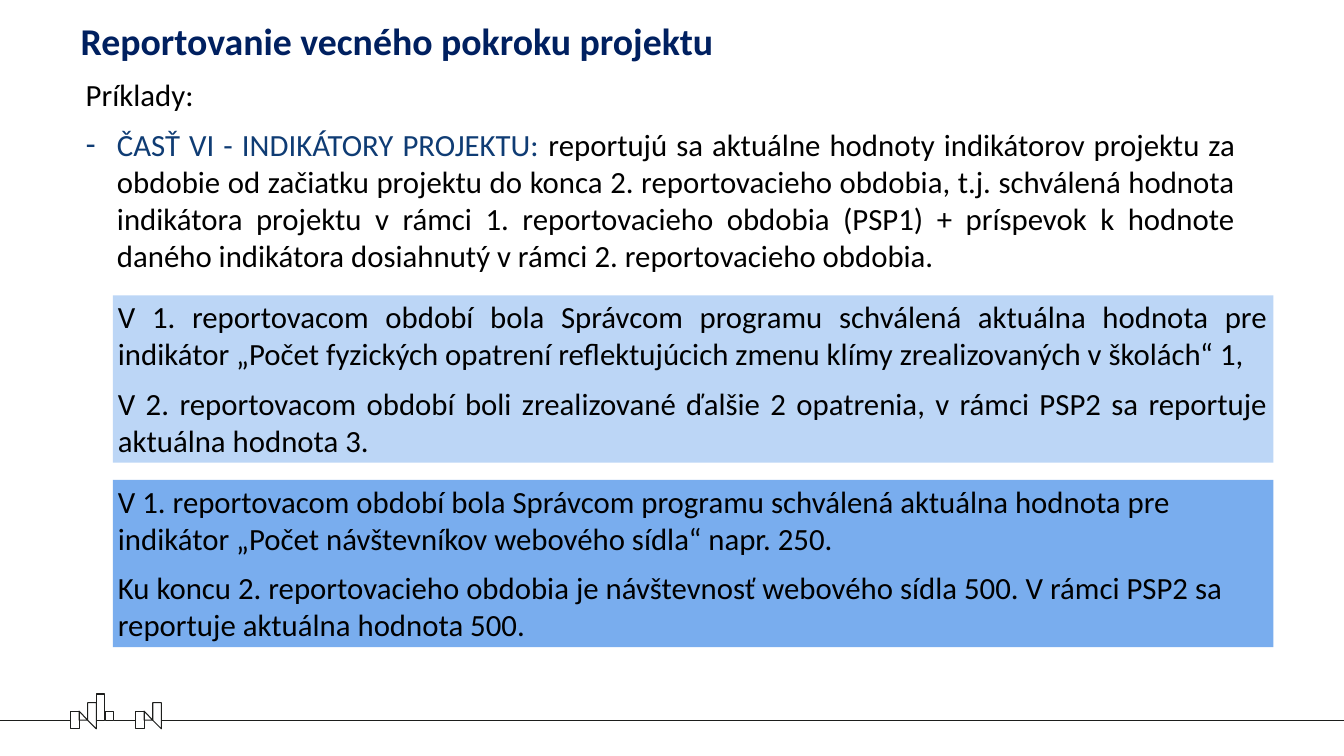
from lxml.etree import SubElement
from pptx import Presentation
from pptx.dml.color import RGBColor
from pptx.enum.shapes import MSO_CONNECTOR as Connector, MSO_SHAPE as Shape
from pptx.enum.text import MSO_ANCHOR as Anchor, MSO_AUTO_SIZE as AutoSize, PP_ALIGN as Align
from pptx.oxml.ns import qn
from pptx.util import Inches, Pt

COLORS = {"title": "002060", "accent": "0F3C74", "text": "000000", "ink": "1D1E1C",
          "white": "FFFFFF", "light": "BCD6F6", "medium": "79ADEE"}
FONT = "Calibri"

# Content: a paragraph is a list of (text, colour) spans
TITLE = "Reportovanie vecného pokroku projektu"
BODY = [
    [("Príklady:", "text")],
    [("ČASŤ VI - INDIKÁTORY PROJEKTU: ", "accent"),
     ("reportujú sa aktuálne hodnoty indikátorov projektu za obdobie od začiatku projektu "
      "do konca 2. reportovacieho obdobia, t.j. schválená hodnota indikátora projektu v rámci "
      "1. reportovacieho obdobia (PSP1) + príspevok k hodnote daného indikátora dosiahnutý "
      "v rámci 2. reportovacieho obdobia.", "text")],
]
EXAMPLES = [
    ("light", Align.JUSTIFY, [
        "V 1. reportovacom období bola Správcom programu schválená aktuálna hodnota pre indikátor "
        "„Počet fyzických opatrení reflektujúcich zmenu klímy zrealizovaných v školách“ 1,",
        "V 2. reportovacom období boli zrealizované ďalšie 2 opatrenia, v rámci PSP2 sa reportuje "
        "aktuálna hodnota 3."]),
    ("medium", Align.LEFT, [
        "V 1. reportovacom období bola Správcom programu schválená aktuálna hodnota pre indikátor "
        "„Počet návštevníkov webového sídla“ napr. 250.",
        "Ku koncu 2. reportovacieho obdobia je návštevnosť webového sídla 500. V rámci PSP2 sa "
        "reportuje aktuálna hodnota 500."]),
]

# Layout in inches
EXAMPLE_LEFT, EXAMPLE_TOP, EXAMPLE_STEP = 2.24, 5.86, 3.66
EXAMPLE_WIDTH, EXAMPLE_HEIGHT = 23.02, 3.32
BULLET_INDENT = 0.62
UNIT = 0.17                                 # width of one house in the skyline
GROUND = 14.29
BLOCKS = [1.4, 2.69]                        # left edges of the two rows of houses
GROUND_LINES = [(0, 1.4), (2.26, 2.69), (3.2, 26.66)]


def color(name):
    return RGBColor.from_string(COLORS[name])


def place(shape, left, top, width, height):
    shape.left, shape.top = Inches(left), Inches(top)
    shape.width, shape.height = Inches(width), Inches(height)


def fill_paragraphs(frame, paragraphs, align, size=44, bold=False, after=18):
    frame.word_wrap = True
    frame.auto_size = AutoSize.NONE
    for index, spans in enumerate(paragraphs):
        para = frame.paragraphs[0] if index == 0 else frame.add_paragraph()
        para.alignment = align
        para.space_before, para.space_after = Pt(0), Pt(after)
        for text, shade in spans:
            span = para.add_run()
            span.text = text
            span.font.name, span.font.size, span.font.bold = FONT, Pt(size), bold
            span.font.color.rgb = color(shade)


def set_bullet(para, char=None):
    properties = para._p.get_or_add_pPr()
    indent = Inches(BULLET_INDENT) if char else 0
    properties.set("marL", str(indent))
    properties.set("indent", str(-indent))
    if char:
        SubElement(properties, qn("a:buChar"), char=char)
    else:
        SubElement(properties, qn("a:buNone"))


def outline(shape):
    shape.shadow.inherit = False
    shape.fill.background()
    shape.line.color.rgb = color("ink")
    shape.line.width = Pt(1.5)


def add_house(slide, left, top, height):
    outline(slide.shapes.add_shape(Shape.RECTANGLE, Inches(left), Inches(top),
                                   Inches(UNIT), Inches(height)))


def add_outline(slide, points):
    """Closed outline; points are rounded to hundredths of an inch."""
    start, *rest = [(round(x * 100), round(y * 100)) for x, y in points]
    builder = slide.shapes.build_freeform(*start, scale=Inches(0.01))
    builder.add_line_segments(rest, close=True)
    outline(builder.convert_to_shape())


def add_skyline(slide):
    for left in BLOCKS:
        middle, right, end = (left + UNIT * n for n in (1, 2, 3))
        roof, floor = GROUND - 0.18, GROUND + UNIT
        add_house(slide, left, roof, 0.35)
        add_outline(slide, [(right, GROUND), (middle, GROUND), (middle, roof)])
        add_outline(slide, [(right, 13.94), (right, GROUND), (end, floor), (end, 13.94)])
    add_house(slide, 1.91, 13.77, 0.52)
    add_house(slide, 2.09, 14.11, 0.18)
    for start, end in GROUND_LINES:
        line = slide.shapes.add_connector(Connector.STRAIGHT, Inches(start), Inches(GROUND),
                                          Inches(end), Inches(GROUND))
        line.line.color.rgb = color("ink")
        line.line.width = Pt(1.5)
        SubElement(line._element.spPr, qn("a:effectLst"))


def main():
    deck = Presentation()
    deck.slide_width, deck.slide_height = Inches(26.66), Inches(15)
    slide = deck.slides.add_slide(deck.slide_layouts[1])

    # Title
    title = slide.shapes.title
    place(title, 1.6, 0.35, 15.9, 0.91)
    title.fill.solid()
    title.fill.fore_color.rgb = color("white")
    frame = title.text_frame
    frame.margin_left = frame.margin_right = frame.margin_top = frame.margin_bottom = 0
    frame.vertical_anchor = Anchor.MIDDLE
    fill_paragraphs(frame, [[(TITLE, "title")]], Align.LEFT, size=54, bold=True, after=0)

    # Introduction
    body = slide.placeholders[1]
    place(body, 1.6, 1.46, 23.02, 4.06)
    fill_paragraphs(body.text_frame, BODY, Align.JUSTIFY)
    for para, char in zip(body.text_frame.paragraphs, (None, "-")):
        set_bullet(para, char)
    # Example boxes
    for index, (shade, align, texts) in enumerate(EXAMPLES):
        box = slide.shapes.add_shape(Shape.RECTANGLE, 0, 0, 0, 0)
        place(box, EXAMPLE_LEFT, EXAMPLE_TOP + index * EXAMPLE_STEP,
              EXAMPLE_WIDTH, EXAMPLE_HEIGHT)
        box.shadow.inherit = False
        box.fill.solid()
        box.fill.fore_color.rgb = color(shade)
        box.line.fill.background()
        box.text_frame.vertical_anchor = Anchor.TOP
        fill_paragraphs(box.text_frame, [[(text, "text")] for text in texts], align)

    # Footer skyline
    add_skyline(slide)
    deck.save("out.pptx")


if __name__ == "__main__":
    main()
